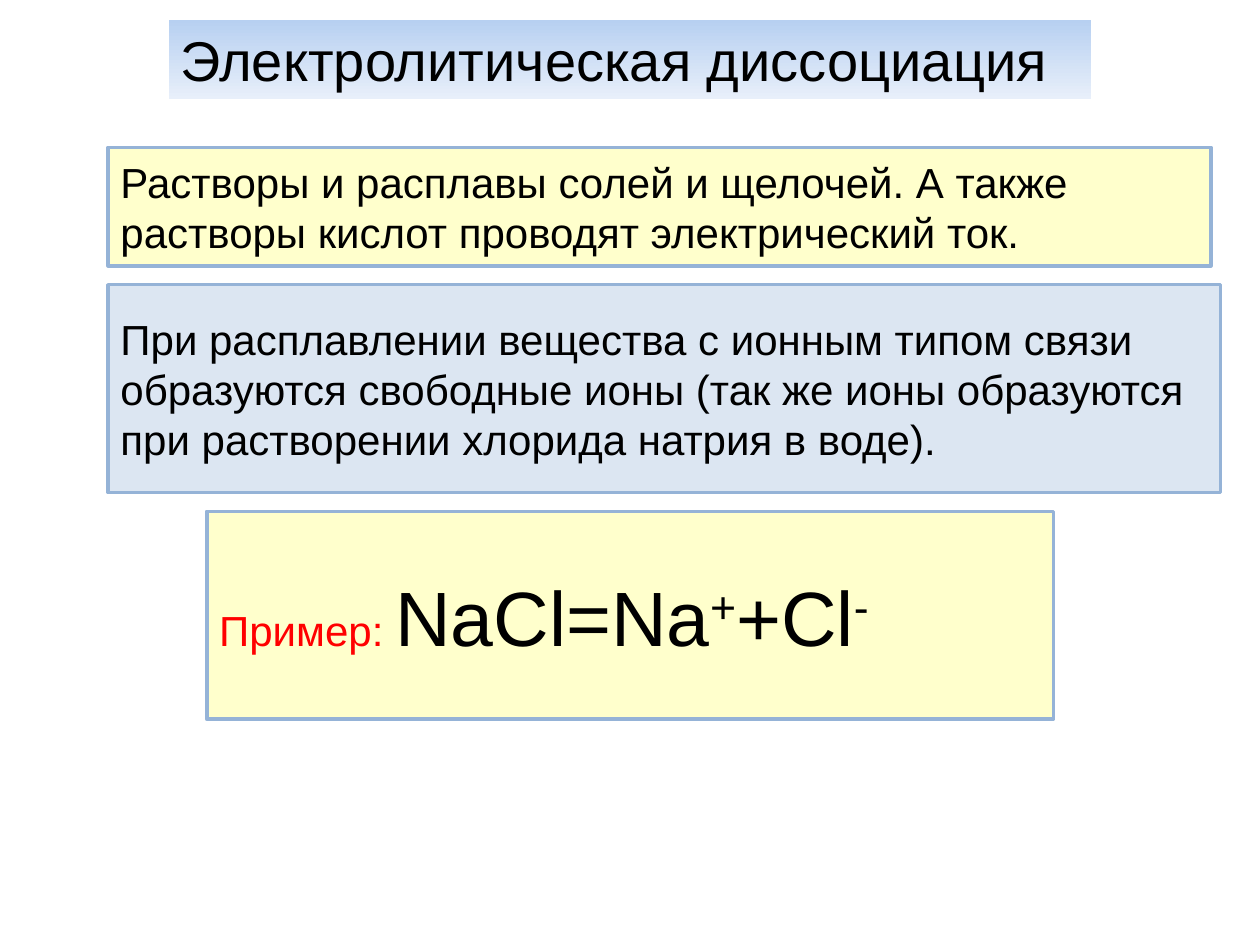
"""Build a chemistry slide about electrolytic dissociation."""
from dataclasses import dataclass

from pptx import Presentation
from pptx.dml.color import RGBColor
from pptx.enum.shapes import MSO_SHAPE
from pptx.enum.text import MSO_ANCHOR, MSO_AUTO_SIZE, PP_ALIGN
from pptx.util import Cm, Pt

RECTANGLE = MSO_SHAPE.RECTANGLE
MIDDLE = MSO_ANCHOR.MIDDLE
NO_AUTOFIT = MSO_AUTO_SIZE.NONE
CENTER, LEFT = PP_ALIGN.CENTER, PP_ALIGN.LEFT

FONT = "Arial"
TITLE_ONLY = 5
COLORS = {
    "text": "000000",
    "accent": "FF0000",
    "cream": "FFFFCC",
    "pale_blue": "DCE6F2",
    "border": "95B3D7",
    "title_top": "B7D0F1",
    "title_bottom": "E8EFFA",
}


@dataclass(frozen=True)
class Span:
    text: str
    size: int = 24
    color: str = "text"
    raised: bool = False


@dataclass(frozen=True)
class Panel:
    left: float
    top: float
    width: float
    height: float
    fill: str
    spans: tuple[Span, ...]


PANELS = (
    Panel(2.18, 2.97, 22.23, 2.39, "cream", (
        Span("Растворы и расплавы солей и щелочей. А также растворы кислот "
             "проводят электрический ток."),
    )),
    Panel(2.18, 5.74, 22.43, 4.19, "pale_blue", (
        Span("При расплавлении вещества с ионным типом связи образуются "
             "свободные ионы (так же ионы образуются при растворении "
             "хлорида натрия в воде)."),
    )),
    Panel(4.17, 10.31, 17.07, 4.19, "cream", (
        Span("Пример: ", color="accent"),
        Span("NaCl=Na", 44),
        Span("+", 44, raised=True),
        Span("+Cl", 44),
        Span("-", 44, raised=True),
    )),
)


def rgb(name: str) -> RGBColor:
    return RGBColor.from_string(COLORS[name])


def style_font(font, size: int, color: str) -> None:
    font.size = Pt(size)
    font.color.rgb = rgb(color)


def draw_title(slide, text: str) -> None:
    title = slide.shapes.title
    title.left, title.top = Cm(3.4), Cm(0.4)
    title.width, title.height = Cm(18.6), Cm(1.6)
    title.fill.gradient()
    title.fill.gradient_angle = 270
    for stop, color in zip(title.fill.gradient_stops, ("title_top", "title_bottom")):
        stop.color.rgb = rgb(color)
    frame = title.text_frame
    frame.auto_size = NO_AUTOFIT
    frame.vertical_anchor = MIDDLE
    frame.margin_left, frame.margin_right = Cm(0), Cm(0.63)
    frame.text = text
    heading = frame.paragraphs[0]
    heading.alignment = CENTER
    heading.font.name = FONT
    style_font(heading.font, 32, "text")


def draw_panel(slide, panel: Panel) -> None:
    box = slide.shapes.add_shape(
        RECTANGLE, Cm(panel.left), Cm(panel.top), Cm(panel.width), Cm(panel.height))
    box.shadow.inherit = False
    box.fill.solid()
    box.fill.fore_color.rgb = rgb(panel.fill)
    box.line.color.rgb = rgb("border")
    box.line.width = Pt(2)
    frame = box.text_frame
    frame.word_wrap = True
    frame.vertical_anchor = MIDDLE
    statement = frame.paragraphs[0]
    statement.alignment = LEFT
    statement.font.name = FONT
    if len(panel.spans) == 1:
        style_font(statement.font, panel.spans[0].size, panel.spans[0].color)
    for span in panel.spans:
        run = statement.add_run()
        run.text = span.text
        if len(panel.spans) > 1:
            style_font(run.font, span.size, span.color)
        if span.raised:
            run._r.get_or_add_rPr().set("baseline", "30000")


def main() -> None:
    deck = Presentation()
    deck.slide_width, deck.slide_height = Cm(25.4), Cm(19.05)
    slide = deck.slides.add_slide(deck.slide_layouts[TITLE_ONLY])
    draw_title(slide, "Электролитическая диссоциация")
    for panel in PANELS:
        draw_panel(slide, panel)
    deck.save("out.pptx")


if __name__ == "__main__":
    main()
